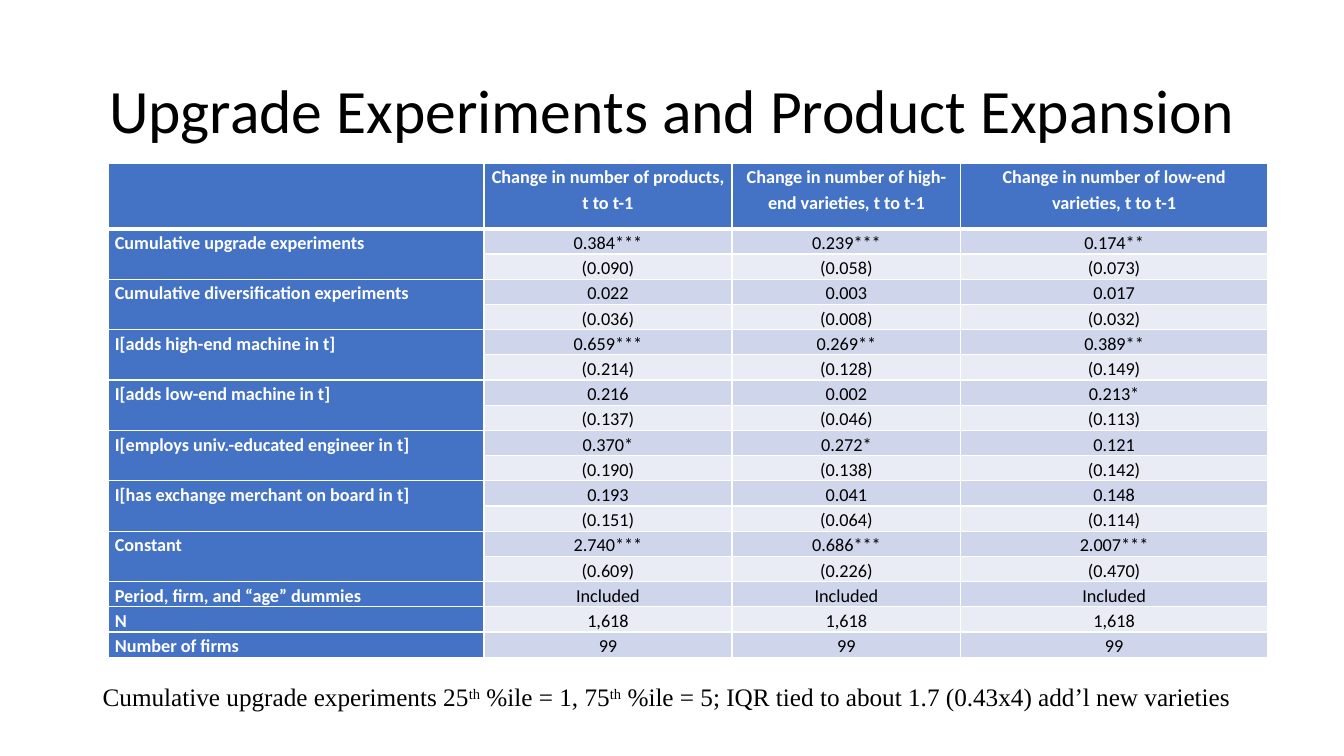
from lxml import etree
from pptx import Presentation
from pptx import util as u
from pptx.dml.color import RGBColor
from pptx.enum import text
from pptx.oxml.ns import qn

TITLE = "Upgrade Experiments and Product Expansion"
HEADERS = [
    "",
    "Change in number of products, t to t-1",
    "Change in number of high-end varieties, t to t-1",
    "Change in number of low-end varieties, t to t-1",
]
# Each effect: label, coefficients, standard errors
EFFECTS = [
    ("Cumulative upgrade experiments",
     ("0.384***", "0.239***", "0.174**"), ("(0.090)", "(0.058)", "(0.073)")),
    ("Cumulative diversification experiments",
     ("0.022", "0.003", "0.017"), ("(0.036)", "(0.008)", "(0.032)")),
    ("I[adds high-end machine in t]",
     ("0.659***", "0.269**", "0.389**"), ("(0.214)", "(0.128)", "(0.149)")),
    ("I[adds low-end machine in t]",
     ("0.216", "0.002", "0.213*"), ("(0.137)", "(0.046)", "(0.113)")),
    ("I[employs univ.-educated engineer in t]",
     ("0.370*", "0.272*", "0.121"), ("(0.190)", "(0.138)", "(0.142)")),
    ("I[has exchange merchant on board in t]",
     ("0.193", "0.041", "0.148"), ("(0.151)", "(0.064)", "(0.114)")),
    ("Constant",
     ("2.740***", "0.686***", "2.007***"), ("(0.609)", "(0.226)", "(0.470)")),
]
SUMMARY = [
    ("Period, firm, and “age” dummies", "Included"),
    ("N", "1,618"),
    ("Number of firms", "99"),
]
# Every second piece is superscript
NOTE = ["Cumulative upgrade experiments 25", "th", " %ile = 1, 75", "th",
        " %ile = 5; IQR tied to about 1.7 (0.43x4) add’l new varieties"]

WHITE = RGBColor(0xFF, 0xFF, 0xFF)
BLACK = RGBColor(0, 0, 0)
BLUE = RGBColor(0x44, 0x72, 0xC4)
BANDS = [RGBColor(0xCF, 0xD5, 0xEA), RGBColor(0xE9, 0xEB, 0xF5)]
COLS = [3.72, 2.46, 2.27, 3.04]
HEADER_H, ROW_H = 0.65, 0.25
LEFT, CENTER = text.PP_ALIGN.LEFT, text.PP_ALIGN.CENTER
TOP, MIDDLE = text.MSO_ANCHOR.TOP, text.MSO_ANCHOR.MIDDLE


def write(tf, pieces, size, font="Calibri", color=BLACK, bold=False,
          align=LEFT, spacing=1.0):
    """Fill the first paragraph; odd-numbered pieces become superscript."""
    p = tf.paragraphs[0]
    p.alignment, p.line_spacing = align, spacing
    for i, piece in enumerate(pieces):
        r = p.add_run()
        r.text = piece
        r.font.size, r.font.name, r.font.bold = u.Pt(size), font, bold
        r.font.color.rgb = color
        if i % 2:
            r._r.get_or_add_rPr().set("baseline", "30000")


def text_box(s, box, pieces, size, anchor=TOP, **fmt):
    tf = s.shapes.add_textbox(*map(u.Inches, box)).text_frame
    tf.word_wrap, tf.vertical_anchor = True, anchor
    write(tf, pieces, size, **fmt)


def set_borders(cell, bottom):
    tc_pr = cell._tc.get_or_add_tcPr()
    for i, (side, width) in enumerate(
            [("lnL", 1), ("lnR", 1), ("lnT", 1), ("lnB", bottom)]):
        ln = etree.Element(qn(f"a:{side}"), w=str(u.Pt(width)))
        fill = etree.SubElement(ln, qn("a:solidFill"))
        etree.SubElement(fill, qn("a:srgbClr"), val=str(WHITE))
        tc_pr.insert(i, ln)


def fill_cell(cell, words, fill, anchor=TOP, bottom=1, **fmt):
    cell.margin_left = cell.margin_right = u.Inches(0.06)
    cell.margin_top = cell.margin_bottom = 0
    cell.vertical_anchor = anchor
    cell.fill.solid()
    cell.fill.fore_color.rgb = fill
    set_borders(cell, bottom)
    if words:
        write(cell.text_frame, [words], 13, spacing=1.15, **fmt)
    else:
        end = etree.SubElement(cell.text_frame.paragraphs[0]._p, qn("a:endParaRPr"))
        end.set("sz", "1300")


def add_results(s):
    rows = []
    for label, coefficients, errors in EFFECTS:
        rows += [(label, *coefficients), ("", *errors)]
    rows += [(label, value, value, value) for label, value in SUMMARY]

    height = HEADER_H + ROW_H * len(rows)
    frame = s.shapes.add_table(len(rows) + 1, len(COLS), u.Inches(1.08), u.Inches(1.62),
                               u.Inches(sum(COLS)), u.Inches(height))
    table = frame.table
    for col, width in zip(table.columns, COLS):
        col.width = u.Inches(width)
    for i, row in enumerate(table.rows):
        row.height = u.Inches(ROW_H if i else HEADER_H)

    for c, words in enumerate(HEADERS):
        fill_cell(table.cell(0, c), words, BLUE, bottom=3,
                  color=WHITE, bold=True, align=CENTER)
    constant_row = 2 * len(EFFECTS) - 1
    for i, (label, *values) in enumerate(rows, 1):
        fill_cell(table.cell(i, 0), label, BLUE, color=WHITE, bold=True)
        for c, value in enumerate(values, 1):
            fill_cell(table.cell(i, c), value, BANDS[(i - 1) % 2], align=CENTER,
                      anchor=MIDDLE if i < constant_row else TOP)
    for i in range(1, 2 * len(EFFECTS), 2):
        table.cell(i, 0).merge(table.cell(i + 1, 0))


def main():
    prs = Presentation()
    prs.slide_width, prs.slide_height = u.Inches(13.33), u.Inches(7.5)
    s = prs.slides.add_slide(prs.slide_layouts[6])
    text_box(s, (0.92, 0.4, 11.5, 1.45), [TITLE], 44, anchor=MIDDLE,
             align=CENTER, spacing=0.9)
    add_results(s)
    text_box(s, (0.92, 6.69, 11.98, 0.41), NOTE, 18, font="Times New Roman",
             spacing=1.07)
    prs.save("out.pptx")


if __name__ == "__main__":
    main()
